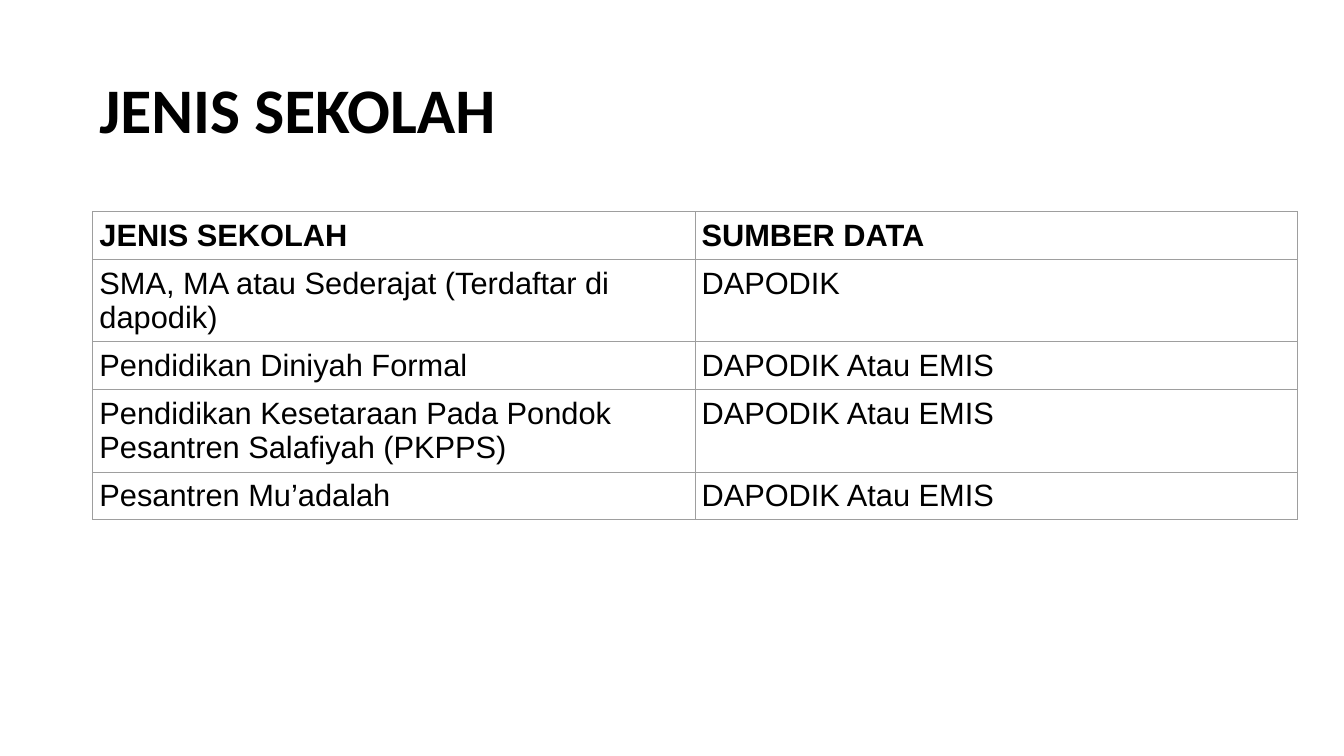
from lxml import etree
from pptx import Presentation
from pptx.dml.color import RGBColor
from pptx.enum.text import MSO_ANCHOR, PP_ALIGN
from pptx.oxml.ns import qn
from pptx.util import Inches, Pt

MIDDLE = MSO_ANCHOR.MIDDLE
TOP = MSO_ANCHOR.TOP
LEFT = PP_ALIGN.LEFT
WIDE, HIGH = 20, 11.25
COLS, ROWS = 100, 75
HEX = {"text": "000000", "edge": "9E9E9E", "back": "FFFFFF"}
SIDES = ("a:lnL", "a:lnR", "a:lnT", "a:lnB")
DATA = [
    ("JENIS SEKOLAH", "SUMBER DATA"),
    ("SMA, MA atau Sederajat (Terdaftar di dapodik)", "DAPODIK"),
    ("Pendidikan Diniyah Formal", "DAPODIK Atau EMIS"),
    ("Pendidikan Kesetaraan Pada Pondok Pesantren Salafiyah (PKPPS)",
     "DAPODIK Atau EMIS"),
    ("Pesantren Mu’adalah", "DAPODIK Atau EMIS"),
]


class Deck:
    def __init__(self):
        self.file = Presentation()
        self.file.slide_width = Inches(WIDE)
        self.file.slide_height = Inches(HIGH)
        self.slide = self.file.slides.add_slide(self.file.slide_layouts[5])
        fill = self.slide.background.fill
        fill.solid()
        fill.fore_color.rgb = RGBColor.from_string(HEX["back"])

    def box(self, col, row, wide, high):
        return (Inches(col * WIDE / COLS), Inches(row * HIGH / ROWS),
                Inches(wide * WIDE / COLS), Inches(high * HIGH / ROWS))

    def run(self, para, text, face, size, bold):
        run = para.add_run()
        run.text = text
        run.font.name = face
        run.font.size = Pt(size)
        run.font.bold = bold
        run.font.color.rgb = RGBColor.from_string(HEX["text"])

    def title(self, text, place):
        head = self.slide.shapes.title
        head.left, head.top, head.width, head.height = self.box(*place)
        frame = head.text_frame
        frame.word_wrap = True
        frame.vertical_anchor = MIDDLE
        para = frame.paragraphs[0]
        para.alignment = LEFT
        para.line_spacing = 0.9
        self.run(para, text, "Calibri", 68, True)

    def edge(self, cell):
        props = cell._tc.get_or_add_tcPr()
        for spot, side in enumerate(SIDES):
            line = etree.Element(qn(side), w=str(Pt(0.75)))
            fill = etree.SubElement(line, qn("a:solidFill"))
            etree.SubElement(fill, qn("a:srgbClr"), val=HEX["edge"])
            props.insert(spot, line)

    def table(self, data, place):
        shape = self.slide.shapes.add_table(
            len(data), len(data[0]), *self.box(*place))
        grid = shape.table
        grid.horz_banding = False
        for row, texts in enumerate(data):
            for col, text in enumerate(texts):
                cell = grid.cell(row, col)
                cell.fill.background()
                cell.vertical_anchor = TOP
                cell.margin_left = cell.margin_right = Inches(0.1)
                cell.margin_top = cell.margin_bottom = Inches(0.1)
                self.edge(cell)
                para = cell.text_frame.paragraphs[0]
                self.run(para, text, "Arial", 33, row == 0)


def main():
    deck = Deck()
    deck.title("JENIS SEKOLAH", (6.9, 4, 86.25, 14.47))
    deck.table(DATA, (6.9, 21, 89.6, 14))
    deck.file.save("out.pptx")


if __name__ == "__main__":
    main()
